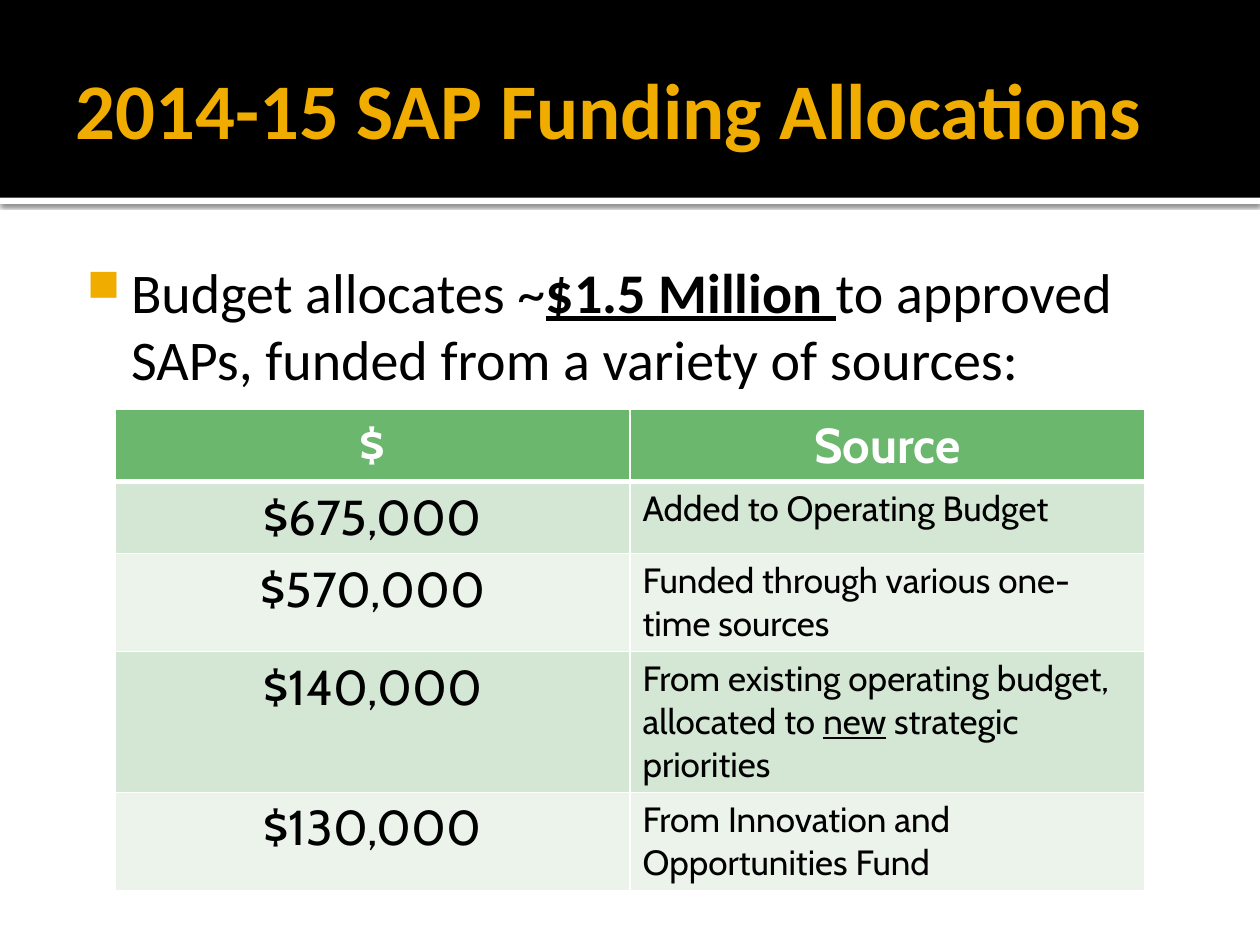
from lxml.etree import SubElement
from pptx import Presentation
from pptx.dml.color import RGBColor
from pptx.enum.shapes import MSO_SHAPE
from pptx.enum.text import MSO_ANCHOR, MSO_AUTO_SIZE, PP_ALIGN
from pptx.oxml import parse_xml
from pptx.oxml.ns import nsdecls, qn
from pptx.util import Pt

SOURCES = [
    ("$675,000", ["Added to Operating Budget"]),
    ("$570,000", ["Funded through various one-time sources"]),
    ("$140,000", ["From existing operating budget, allocated to ", "new",
                  " strategic priorities"]),
    ("$130,000", ["From Innovation and Opportunities Fund"]),
]
ROW_HEIGHTS = [40, 40, 56, 80, 55]


def color(hex_string):
    return RGBColor.from_string(hex_string)


class SlideBuilder:
    heading_font, table_font = "Calibri", "Cabin"
    black, white, gold = "000000", "FFFFFF", "F0AD00"
    header_green, bands = "6BB76D", ("D4E6D4", "EBF3EB")

    def __init__(self, slide):
        self.slide = slide

    def add_runs(self, paragraph, parts, font, size, hex_string, bold=False):
        """Add one run per part and underline the second, emphasised one."""
        for index, part in enumerate(parts):
            run = paragraph.add_run()
            run.text = part
            run.font.name, run.font.size, run.font.bold = font, Pt(size), bold
            run.font.color.rgb = color(hex_string)
            if index == 1:
                run.font.underline = True

    def set_frame(self, frame, left, top, right, bottom):
        frame.word_wrap = True
        frame.auto_size = MSO_AUTO_SIZE.NONE
        frame.margin_left, frame.margin_top = Pt(left), Pt(top)
        frame.margin_right, frame.margin_bottom = Pt(right), Pt(bottom)

    def bar(self, top, height, hex_string):
        bar = self.slide.shapes.add_shape(
            MSO_SHAPE.RECTANGLE, 0, Pt(top), Pt(720), Pt(height))
        bar.shadow.inherit = False
        bar.fill.solid()
        bar.fill.fore_color.rgb = color(hex_string)
        bar.line.fill.background()
        return bar

    def drop_shadow(self, shape):
        effects = shape.element.spPr.find(qn("a:effectLst"))
        shadow = SubElement(effects, qn("a:outerShdw"), blurRad=str(Pt(2.5)),
                            dist=str(Pt(0.8)), dir="5400000", rotWithShape="0")
        shade = SubElement(shadow, qn("a:srgbClr"), val=self.black)
        SubElement(shade, qn("a:alpha"), val="60000")

    def title(self, text):
        title = self.slide.shapes.title
        title.element.getparent().append(title.element)  # in front of the bars
        title.left, title.top, title.width, title.height = Pt(36), Pt(12.2), Pt(648), Pt(98.6)
        frame = title.text_frame
        self.set_frame(frame, 7.2, 3.6, 3.6, 3.6)
        frame.vertical_anchor = MSO_ANCHOR.MIDDLE
        paragraph = frame.paragraphs[0]
        paragraph.alignment = PP_ALIGN.LEFT
        self.add_runs(paragraph, [text], self.heading_font, 45, self.gold, bold=True)

    def bullet(self, parts):
        body = self.slide.shapes.add_textbox(Pt(36), Pt(139.7), Pt(648), Pt(364.3))
        self.set_frame(body.text_frame, 4.3, 7.2, 7.2, 3.6)
        paragraph = body.text_frame.paragraphs[0]
        self.add_runs(paragraph, parts, self.heading_font, 32, self.black)
        paragraph.runs[1].font.bold = True
        properties = paragraph._p.get_or_add_pPr()
        properties.set("marL", str(Pt(34.6)))
        properties.set("indent", str(Pt(-25.2)))
        bullet_color = SubElement(properties, qn("a:buClr"))
        SubElement(bullet_color, qn("a:srgbClr"), val=self.gold)
        SubElement(properties, qn("a:buSzPct"), val="80000")
        SubElement(properties, qn("a:buChar"), char="■")

    def cell(self, cell, parts, fill, size, text_color, bold=False, centered=True,
             top_line=1, bottom_line=1):
        cell.fill.solid()
        cell.fill.fore_color.rgb = color(fill)
        paragraph = cell.text_frame.paragraphs[0]
        paragraph.alignment = PP_ALIGN.CENTER if centered else PP_ALIGN.LEFT
        self.add_runs(paragraph, parts, self.table_font, size, text_color, bold)
        properties = cell._tc.get_or_add_tcPr()
        widths = {"lnL": 1, "lnR": 1, "lnT": top_line, "lnB": bottom_line}
        for index, (side, width) in enumerate(widths.items()):
            properties.insert(index, parse_xml(
                f'<a:{side} {nsdecls("a")} w="{Pt(width)}"><a:solidFill>'
                f'<a:srgbClr val="{self.white}"/></a:solidFill></a:{side}>'))

    def funding_table(self, headers, sources, heights):
        table = self.slide.shapes.add_table(
            len(heights), len(headers), Pt(66), Pt(234), Pt(588), Pt(sum(heights))).table
        for row, height in zip(table.rows, heights):
            row.height = Pt(height)
        for column, header in enumerate(headers):
            self.cell(table.cell(0, column), [header], self.header_green, 28, self.white,
                      bold=True, bottom_line=3)
        for row, (amount, source) in enumerate(sources, start=1):
            band = self.bands[(row - 1) % 2]
            top_line = 3 if row == 1 else 1
            self.cell(table.cell(row, 0), [amount], band, 28, self.black, top_line=top_line)
            self.cell(table.cell(row, 1), source, band, 20, self.black, centered=False,
                      top_line=top_line)


def main():
    presentation = Presentation()
    presentation.slide_width, presentation.slide_height = Pt(720), Pt(540)
    builder = SlideBuilder(presentation.slides.add_slide(presentation.slide_layouts[5]))
    divider = builder.bar(113, 3.6, builder.white)
    builder.drop_shadow(divider)
    builder.bar(0, 113, builder.black)
    builder.title("2014-15 SAP Funding Allocations")
    builder.bullet(["Budget allocates ~", "$1.5 Million ",
                    "to approved SAPs, funded from a variety of sources:"])
    builder.funding_table(["$", "Source"], SOURCES, ROW_HEIGHTS)
    presentation.save("out.pptx")


if __name__ == "__main__":
    main()
